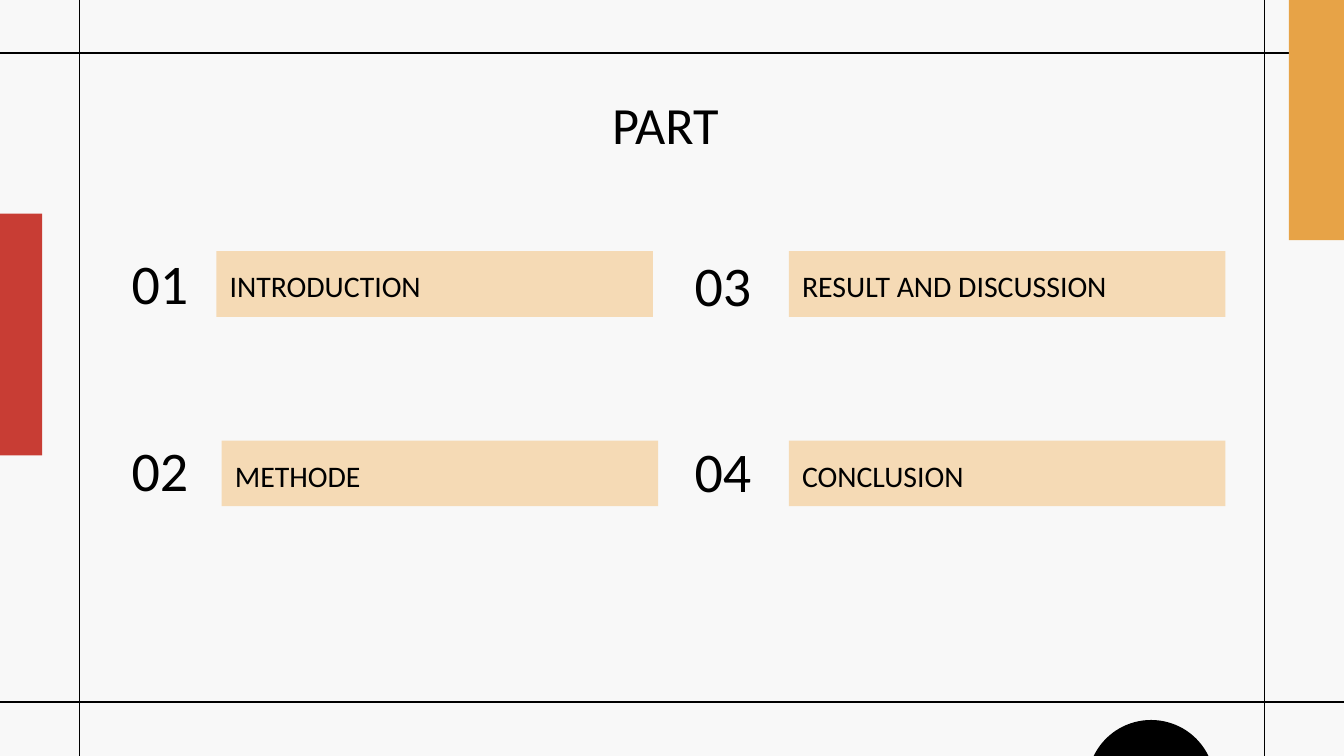
from lxml import etree
from pptx import Presentation
from pptx.dml import color
from pptx.enum import shapes, text
from pptx.oxml import ns
from pptx.util import Cm, Pt

BLACK = "000000"
PARTS = [
    ("01", "INTRODUCTION", 2.01, 4.57, 4.09, 4.75),
    ("02", "METHODE", 2.01, 8.1, 4.19, 8.33),
    ("03", "RESULT AND DISCUSSION", 12.65, 4.6, 14.91, 4.75),
    ("04", "CONCLUSION", 12.65, 8.13, 14.91, 8.33),
]


def rgb(value):
    """Turn a hex string into a colour."""
    return color.RGBColor.from_string(value)


def add_block(slide, kind, left, top, width, height, fill):
    """Add a filled shape without outline or shadow."""
    shape = slide.shapes.add_shape(kind, Cm(left), Cm(top), Cm(width), Cm(height))
    shape.shadow.inherit = False
    shape.fill.solid()
    shape.fill.fore_color.rgb = rgb(fill)
    shape.line.fill.background()
    return shape


def add_rule(slide, x1, y1, x2, y2):
    """Add a thin black line."""
    line = slide.shapes.add_connector(
        shapes.MSO_CONNECTOR.STRAIGHT, Cm(x1), Cm(y1), Cm(x2), Cm(y2))
    line.line.color.rgb = rgb(BLACK)
    line.line.width = Pt(0.75)
    etree.SubElement(line._element.spPr, ns.qn("a:effectLst"))


def write(shape, words, size, align, anchor, spacing=1.0):
    """Set the text of a shape and format it."""
    frame = shape.text_frame
    frame.text = words
    frame.word_wrap = True
    frame.vertical_anchor = anchor
    frame.margin_left = frame.margin_right = Cm(0.25)
    frame.margin_top = frame.margin_bottom = Cm(0.25)
    paragraph = frame.paragraphs[0]
    paragraph.alignment = align
    paragraph.line_spacing = spacing
    font = paragraph.runs[0].font
    font.name = "Calibri"
    font.size = Pt(size)
    font.color.rgb = rgb(BLACK)


def add_heading(slide, words, left, top, width, size, anchor):
    """Add a centred text box for the title or a part number."""
    box = slide.shapes.add_textbox(Cm(left), Cm(top), Cm(width), Cm(1.65))
    write(box, words, size, text.PP_ALIGN.CENTER, anchor)


def add_part(slide, number, name, number_left, number_top, bar_left, bar_top):
    """Add a part number and its labelled bar."""
    bottom = text.MSO_ANCHOR.BOTTOM
    add_heading(slide, number, number_left, number_top, 2.03, 30, bottom)
    bar = add_block(slide, shapes.MSO_SHAPE.RECTANGLE,
                    bar_left, bar_top, 8.25, 1.24, "F5DAB5")
    write(bar, name, 16, text.PP_ALIGN.LEFT, bottom, 1.15)


def add_decoration(slide):
    """Add the frame lines and the coloured blocks at the edges."""
    rectangle = shapes.MSO_SHAPE.RECTANGLE
    add_block(slide, shapes.MSO_SHAPE.OVAL, 20.55, 13.61, 2.41, 2.41, BLACK)
    add_block(slide, rectangle, -0.43, 4.04, 1.23, 4.57, "C83D34")
    for x in (1.5, 23.9):
        add_rule(slide, x, -0.03, x, 14.35)
    for y in (1.0, 13.27):
        add_rule(slide, 0, y, 25.45, y)
    add_block(slide, rectangle, 24.36, -0.03, 1.04, 4.57, "E7A347")


def main():
    """Build the slide and save it."""
    presentation = Presentation()
    presentation.slide_width = Cm(25.4)
    presentation.slide_height = Cm(14.29)
    slide = presentation.slides.add_slide(presentation.slide_layouts[6])
    slide.background.fill.solid()
    slide.background.fill.fore_color.rgb = rgb("F8F8F8")
    add_decoration(slide)
    add_heading(slide, "PART", 2.01, 1.5, 21.13, 28, text.MSO_ANCHOR.TOP)
    for part in PARTS:
        add_part(slide, *part)
    presentation.save("out.pptx")


if __name__ == "__main__":
    main()
